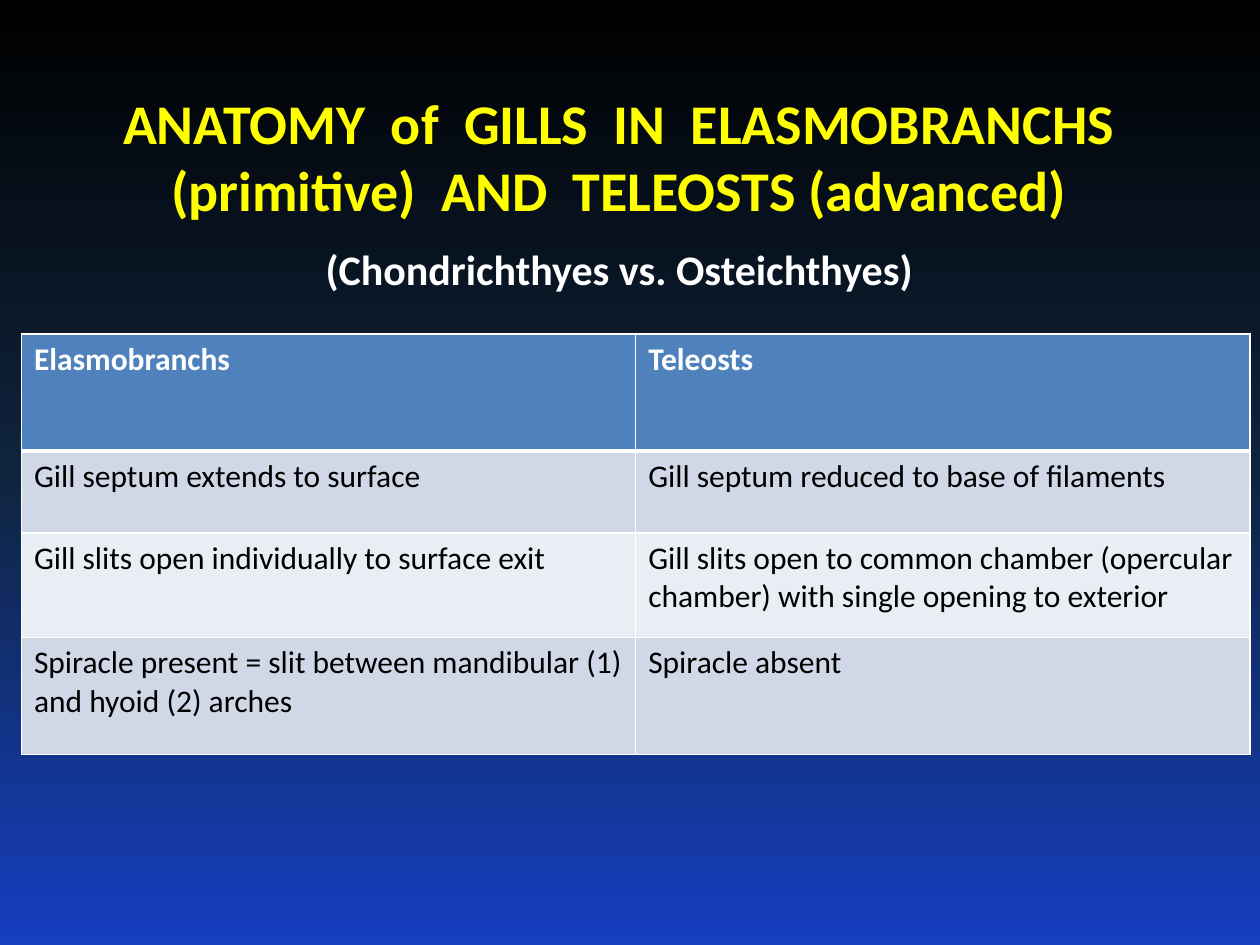
from lxml import etree
from pptx import Presentation
from pptx.dml.color import RGBColor
from pptx.enum.text import PP_ALIGN
from pptx.oxml.ns import qn
from pptx.util import Inches, Pt

CENTER = PP_ALIGN.CENTER
FONT = "Calibri"
COLORS = {
    "title": "FFFF00",
    "white": "FFFFFF",
    "body": "000000",
    "header": "4F81BD",
    "band_dark": "D0D8E8",
    "band_light": "E9EDF4",
}
BACKGROUND_STOPS = [(0, "000000"), (50, "0F243E"), (100, "153EC1")]
HEADINGS = [
    ("ANATOMY  of  GILLS  IN  ELASMOBRANCHS (primitive)  AND  TELEOSTS (advanced)", 32, "title", 0),
    ("(Chondrichthyes vs. Osteichthyes)", 24, "white", 12),
]
ROWS = [
    ("Elasmobranchs", "Teleosts"),
    ("Gill septum extends to surface", "Gill septum reduced to base of filaments"),
    (
        "Gill slits open individually to surface exit",
        "Gill slits open to common chamber (opercular chamber) with single opening to exterior",
    ),
    ("Spiracle present = slit between mandibular (1) and hyoid (2) arches", "Spiracle absent"),
]
ROW_HEIGHTS = [0.93, 0.65, 0.83, 0.93]


def style_font(p, size, color, bold):
    p.font.name = FONT
    p.font.size = Pt(size)
    p.font.bold = bold
    p.font.color.rgb = RGBColor.from_string(COLORS[color])


def add_background(slide):
    fill = slide.background.fill
    fill.gradient()
    fill.gradient_angle = 270
    stops = next(slide.element.iter(qn("a:gsLst")))
    for stop in list(stops):
        stops.remove(stop)
    for percent, color in BACKGROUND_STOPS:
        stop = etree.SubElement(stops, qn("a:gs"), pos=str(percent * 1000))
        etree.SubElement(stop, qn("a:srgbClr"), val=color)


def add_heading(slide, left, top, width, height):
    tf = slide.shapes.add_textbox(left, top, width, height).text_frame
    tf.word_wrap = True
    for i, (text, size, color, space) in enumerate(HEADINGS):
        p = tf.add_paragraph() if i else tf.paragraphs[0]
        p.text = text
        p.alignment = CENTER
        p.space_before = Pt(space)
        style_font(p, size, color, True)


def add_borders(cell, widths):
    tc_pr = cell._tc.get_or_add_tcPr()
    for side, width in widths.items():
        ln = etree.SubElement(tc_pr, qn(f"a:ln{side}"), w=str(Pt(width)))
        fill = etree.SubElement(ln, qn("a:solidFill"))
        etree.SubElement(fill, qn("a:srgbClr"), val=COLORS["white"])


def add_comparison(slide, left, top, width, height):
    table = slide.shapes.add_table(len(ROWS), 2, left, top, width, height).table
    for i, (texts, row_height) in enumerate(zip(ROWS, ROW_HEIGHTS)):
        table.rows[i].height = Inches(row_height)
        header = i == 0
        band = "header" if header else "band_dark" if i % 2 else "band_light"
        widths = {"L": 1, "R": 1, "T": 3 if i == 1 else 1, "B": 3 if header else 1}
        for j, text in enumerate(texts):
            cell = table.cell(i, j)
            add_borders(cell, widths)
            cell.fill.solid()
            cell.fill.fore_color.rgb = RGBColor.from_string(COLORS[band])
            p = cell.text_frame.paragraphs[0]
            p.text = text
            style_font(p, 18, "white" if header else "body", header)


def main():
    prs = Presentation()
    prs.slide_width = Inches(10)
    prs.slide_height = Inches(7.5)
    slide = prs.slides.add_slide(prs.slide_layouts[6])
    add_background(slide)
    add_comparison(slide, Inches(0.17), Inches(2.65), Inches(9.75), Inches(3.35))
    add_heading(slide, Inches(0.58), Inches(0.65), Inches(8.67), Inches(1.75))
    prs.save("out.pptx")


if __name__ == "__main__":
    main()
